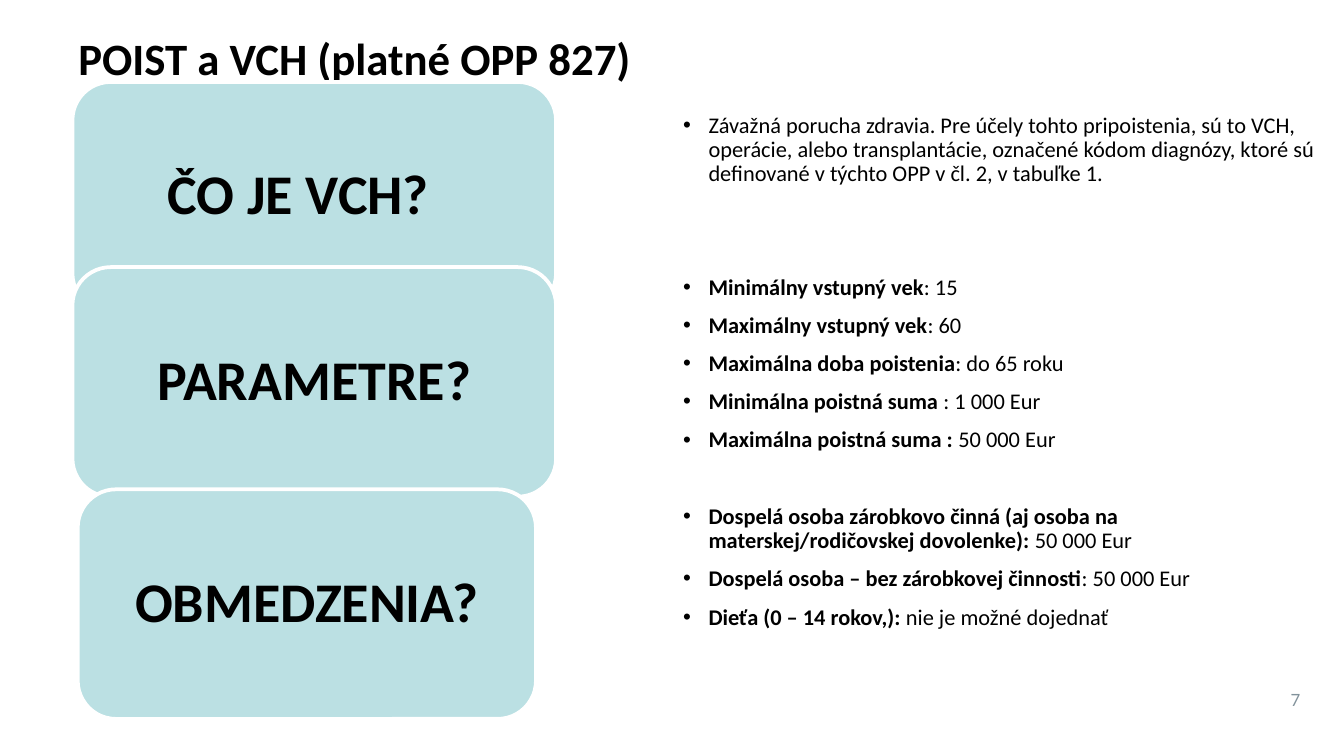
from lxml import etree
from pptx import Presentation
from pptx.dml.color import RGBColor
from pptx.enum.shapes import MSO_SHAPE
from pptx.enum.text import MSO_ANCHOR, MSO_AUTO_SIZE, PP_ALIGN
from pptx.oxml.ns import qn
from pptx.util import Cm, Pt

ROUNDED = MSO_SHAPE.ROUNDED_RECTANGLE
TOP, MIDDLE = MSO_ANCHOR.TOP, MSO_ANCHOR.MIDDLE
LEFT, CENTER = PP_ALIGN.LEFT, PP_ALIGN.CENTER

TITLE = "POIST a VCH (platné OPP 827)"
PAGE = "7"

# Question, left, top, width, right inset (cm)
QUESTIONS = [
    ("ČO JE VCH?", 1.37, 1.55, 9.14, 0.9),
    ("PARAMETRE?", 1.37, 5.05, 9.14, 0.3),
    ("OBMEDZENIA?", 1.47, 9.25, 8.66, 0.3),
]
QUESTION_HEIGHT = 4.34

# Space before the group (pt), then its (bold part, plain part) bullets
ANSWERS = [
    (0, [("", "Závažná porucha zdravia. Pre účely tohto pripoistenia, sú to VCH, "
              "operácie, alebo transplantácie, označené kódom diagnózy, ktoré sú "
              "definované v týchto OPP v čl. 2, v tabuľke 1.")]),
    (48, [("Minimálny vstupný vek", ": 15"),
          ("Maximálny vstupný vek", ": 60"),
          ("Maximálna doba poistenia", ": do 65 roku"),
          ("Minimálna poistná suma ", ": 1 000 Eur"),
          ("Maximálna poistná suma : ", "50 000 Eur")]),
    (28, [("Dospelá osoba zárobkovo činná (aj osoba na "
           "materskej/rodičovskej dovolenke): ", "50 000 Eur"),
          ("Dospelá osoba – bez zárobkovej činnosti", ": 50 000 Eur"),
          ("Dieťa (0 – 14 rokov,): ", "nie je možné dojednať")]),
]
BULLET_GAP = 7.5
BULLET_INDENT = Cm(0.48)

TITLE_FONT = {"name": "Calibri", "size": Pt(24), "bold": True}
QUESTION_FONT = {"name": "Calibri", "size": Pt(30), "bold": True}
ANSWER_FONT = {"name": "Calibri", "size": Pt(12)}
PAGE_FONT = {"name": "Lato", "size": Pt(9), "bold": False}


def rgb(hex_color):
    return RGBColor.from_string(hex_color)


def set_attributes(target, values):
    for name, value in values.items():
        setattr(target, name, value)


def place(shape, left, top, width, height):
    set_attributes(shape, {"left": Cm(left), "top": Cm(top),
                           "width": Cm(width), "height": Cm(height)})


def set_frame(frame, anchor, insets=(0, 0, 0, 0)):
    """Wrap the text, anchor it and set its insets: left, top, right, bottom in cm."""
    sides = ("margin_left", "margin_top", "margin_right", "margin_bottom")
    set_attributes(frame, dict(zip(sides, map(Cm, insets))))
    set_attributes(frame, {"word_wrap": True, "vertical_anchor": anchor,
                           "auto_size": MSO_AUTO_SIZE.NONE})


def add_run(paragraph, text, font, color="000000"):
    run = paragraph.add_run()
    run.text = text
    set_attributes(run.font, font)
    run.font.color.rgb = rgb(color)


def write_line(frame, text, font, alignment, color="000000"):
    line = frame.paragraphs[0]
    set_attributes(line, {"alignment": alignment, "line_spacing": 0.9})
    add_run(line, text, font, color)


def add_bullet(paragraph):
    properties = paragraph._p.get_or_add_pPr()
    properties.set("marL", str(BULLET_INDENT))
    properties.set("indent", str(-BULLET_INDENT))
    etree.SubElement(properties, qn("a:buFont")).set("typeface", "Arial")
    etree.SubElement(properties, qn("a:buChar")).set("char", "•")


def write_answers(frame):
    answer = frame.paragraphs[0]
    for group_gap, bullets in ANSWERS:
        for index, (bold_part, plain_part) in enumerate(bullets):
            if answer.runs:
                answer = frame.add_paragraph()
            add_bullet(answer)
            gap = BULLET_GAP if index else group_gap
            set_attributes(answer, {"alignment": LEFT, "line_spacing": 0.9,
                                    "space_before": Pt(gap)})
            if bold_part:
                add_run(answer, bold_part, {**ANSWER_FONT, "bold": True})
            add_run(answer, plain_part, {**ANSWER_FONT, "bold": False})


def add_question(slide, question, left, top, width, right_inset):
    card = slide.shapes.add_shape(ROUNDED, Cm(left), Cm(top), Cm(width),
                                  Cm(QUESTION_HEIGHT))
    card.shadow.inherit = False
    card.fill.solid()
    card.fill.fore_color.rgb = rgb("BBE0E3")
    card.line.color.rgb = rgb("FFFFFF")
    card.line.width = Pt(2)
    set_frame(card.text_frame, MIDDLE, (0.3, 0.15, right_inset, 0.15))
    write_line(card.text_frame, question, QUESTION_FONT, CENTER)


def main():
    deck = Presentation()
    deck.slide_width, deck.slide_height = Cm(25.4), Cm(14.29)
    slide = deck.slides.add_slide(deck.slide_layouts[1])

    title, answers = slide.placeholders
    place(title, 1.48, 0.69, 11, 1.27)
    set_frame(title.text_frame, TOP)
    write_line(title.text_frame, TITLE, TITLE_FONT, LEFT)

    place(answers, 12.91, 2.15, 12.07, 11.48)
    set_frame(answers.text_frame, TOP)
    write_answers(answers.text_frame)

    for question in QUESTIONS:
        add_question(slide, *question)

    page = slide.shapes.add_textbox(Cm(23.8), Cm(12.93), Cm(1.37), Cm(0.64))
    set_frame(page.text_frame, MIDDLE)
    write_line(page.text_frame, PAGE, PAGE_FONT, CENTER, "82929B")

    deck.save("out.pptx")


if __name__ == "__main__":
    main()
